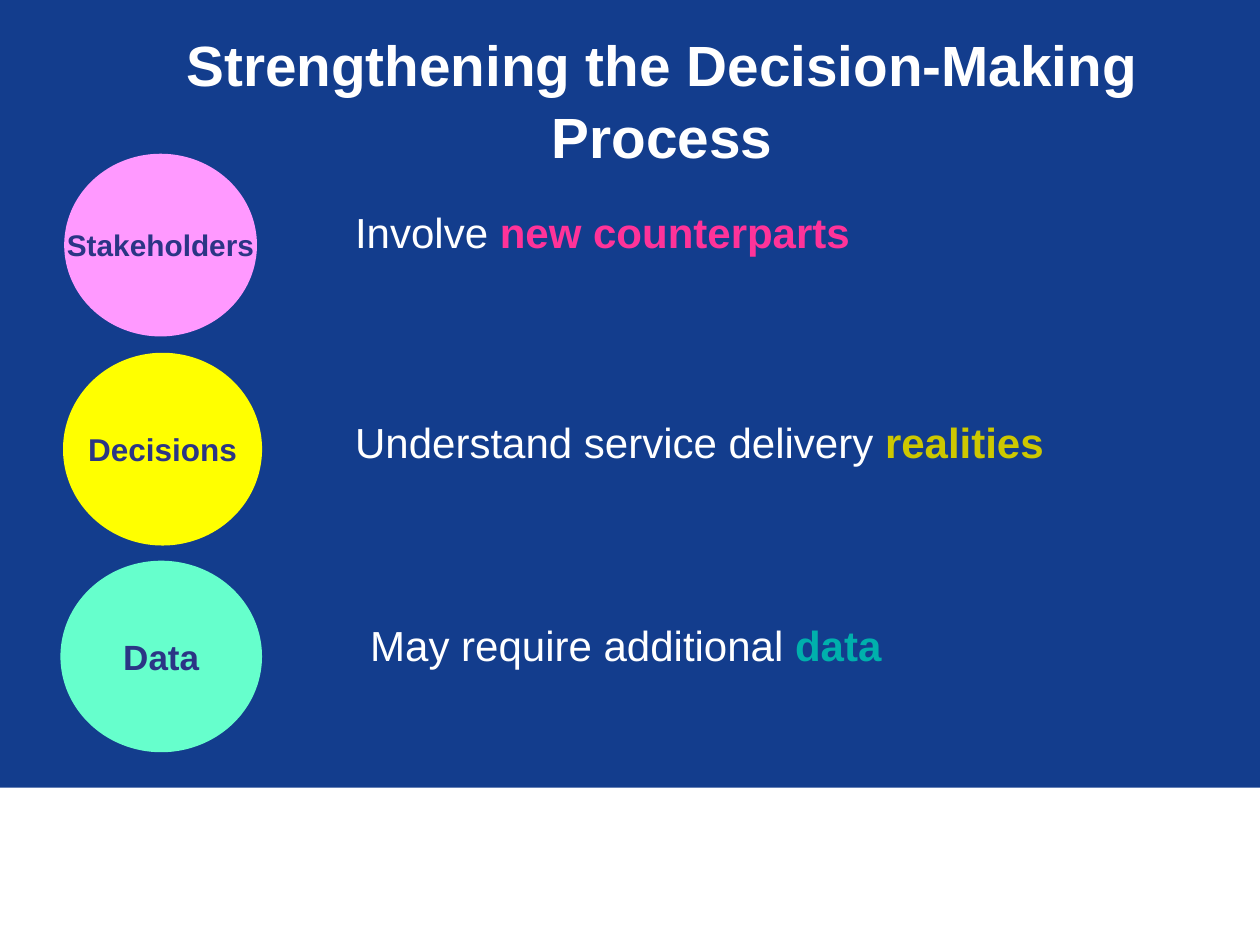
"""Build the slide on strengthening the decision-making process."""
from dataclasses import dataclass

import pptx
import pptx.dml.color
import pptx.enum.shapes
import pptx.enum.text
import pptx.util

Pt = pptx.util.Pt
ALIGN = pptx.enum.text.PP_ALIGN
ANCHOR = pptx.enum.text.MSO_ANCHOR
SHAPES = pptx.enum.shapes.MSO_SHAPE


@dataclass(frozen=True)
class Theme:
    font: str = "Arial"
    background: str = "133D8D"
    white: str = "FFFFFF"
    label: str = "2B3585"
    title_size: float = 32.4
    message_size: float = 24
    line_spacing: float = 1.05


THEME = Theme()

TOPICS = [
    {"label": "Stakeholders", "size": 17, "fill": "FF99FF",
     "circle": (36.72, 87.84, 110.16, 104.4),
     "message": "Involve ", "emphasis": "new counterparts",
     "accent": "FF3399", "box": (195.84, 113.04, 379.44, 36)},
    {"label": "Decisions", "size": 18, "fill": "FFFF00",
     "circle": (36, 201.6, 113.76, 110.16),
     "message": "Understand service delivery ", "emphasis": "realities",
     "accent": "CDC800", "box": (195.84, 233.28, 469.44, 36)},
    {"label": "Data", "size": 20, "fill": "66FFCC",
     "circle": (34.56, 320.4, 115.2, 109.44),
     "message": "May require additional ", "emphasis": "data",
     "accent": "00B0AC", "box": (204.48, 349.2, 379.44, 36)},
]


def rgb(value):
    return pptx.dml.color.RGBColor.from_string(value)


def style(run, size, color, bold=False):
    run.font.name = THEME.font
    run.font.size = Pt(size)
    run.font.bold = bold
    run.font.color.rgb = rgb(color)


def add_filled(slide, kind, bounds, color):
    figure = slide.shapes.add_shape(kind, *map(Pt, bounds))
    figure.shadow.inherit = False
    figure.fill.solid()
    figure.fill.fore_color.rgb = rgb(color)
    figure.line.fill.background()
    return figure


def set_title(slide, text, bounds):
    title = slide.shapes.title
    title.left, title.top, title.width, title.height = map(Pt, bounds)
    frame = title.text_frame
    frame.text = text
    frame.word_wrap = True
    frame.auto_size = pptx.enum.text.MSO_AUTO_SIZE.NONE
    frame.vertical_anchor = ANCHOR.MIDDLE
    heading = frame.paragraphs[0]
    heading.alignment = ALIGN.CENTER
    heading.line_spacing = THEME.line_spacing
    style(heading.runs[0], THEME.title_size, THEME.white, bold=True)


def add_circle(slide, topic):
    circle = add_filled(slide, SHAPES.OVAL, topic["circle"], topic["fill"])
    frame = circle.text_frame
    frame.text = topic["label"]
    frame.word_wrap = False
    frame.vertical_anchor = ANCHOR.MIDDLE
    label = frame.paragraphs[0]
    label.alignment = ALIGN.CENTER
    style(label.runs[0], topic["size"], THEME.label, bold=True)


def add_message(slide, topic):
    frame = slide.shapes.add_textbox(*map(Pt, topic["box"])).text_frame
    frame.word_wrap = True
    message = frame.paragraphs[0]
    message.line_spacing = THEME.line_spacing
    lead, emphasis = message.add_run(), message.add_run()
    lead.text, emphasis.text = topic["message"], topic["emphasis"]
    style(lead, THEME.message_size, THEME.white)
    style(emphasis, THEME.message_size, topic["accent"], bold=True)


def main():
    deck = pptx.Presentation()
    deck.slide_width, deck.slide_height = Pt(720), Pt(540)
    slide = deck.slides.add_slide(deck.slide_layouts.get_by_name("Title Only"))
    slide.background.fill.solid()
    slide.background.fill.fore_color.rgb = rgb(THEME.background)
    add_filled(slide, SHAPES.RECTANGLE, (0, 450, 720, 90), THEME.white)
    set_title(slide, "Strengthening the Decision-Making Process",
              (72.72, 21.6, 611.28, 69.12))
    for topic in TOPICS:
        add_circle(slide, topic)
        add_message(slide, topic)
    deck.save("out.pptx")


if __name__ == "__main__":
    main()
